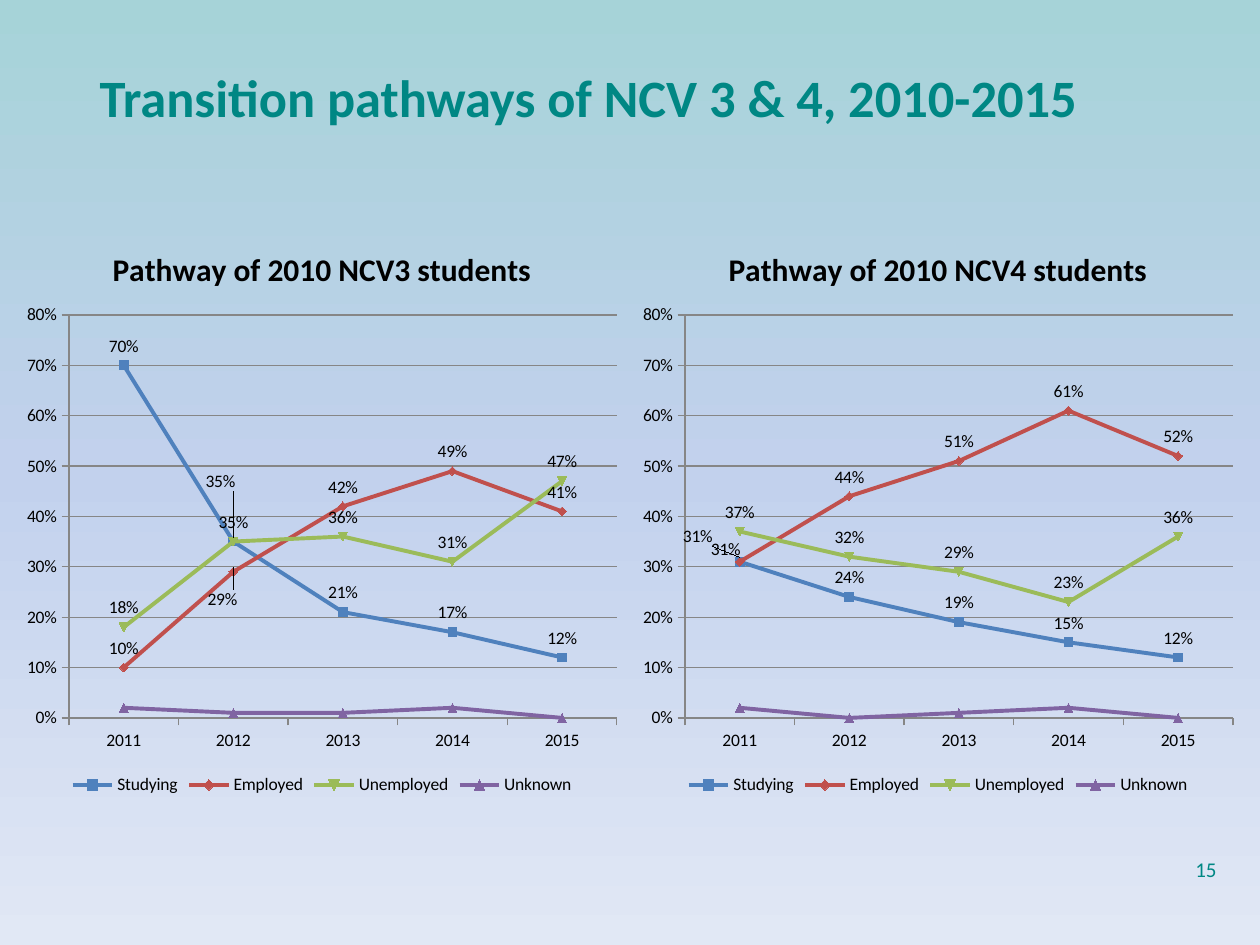
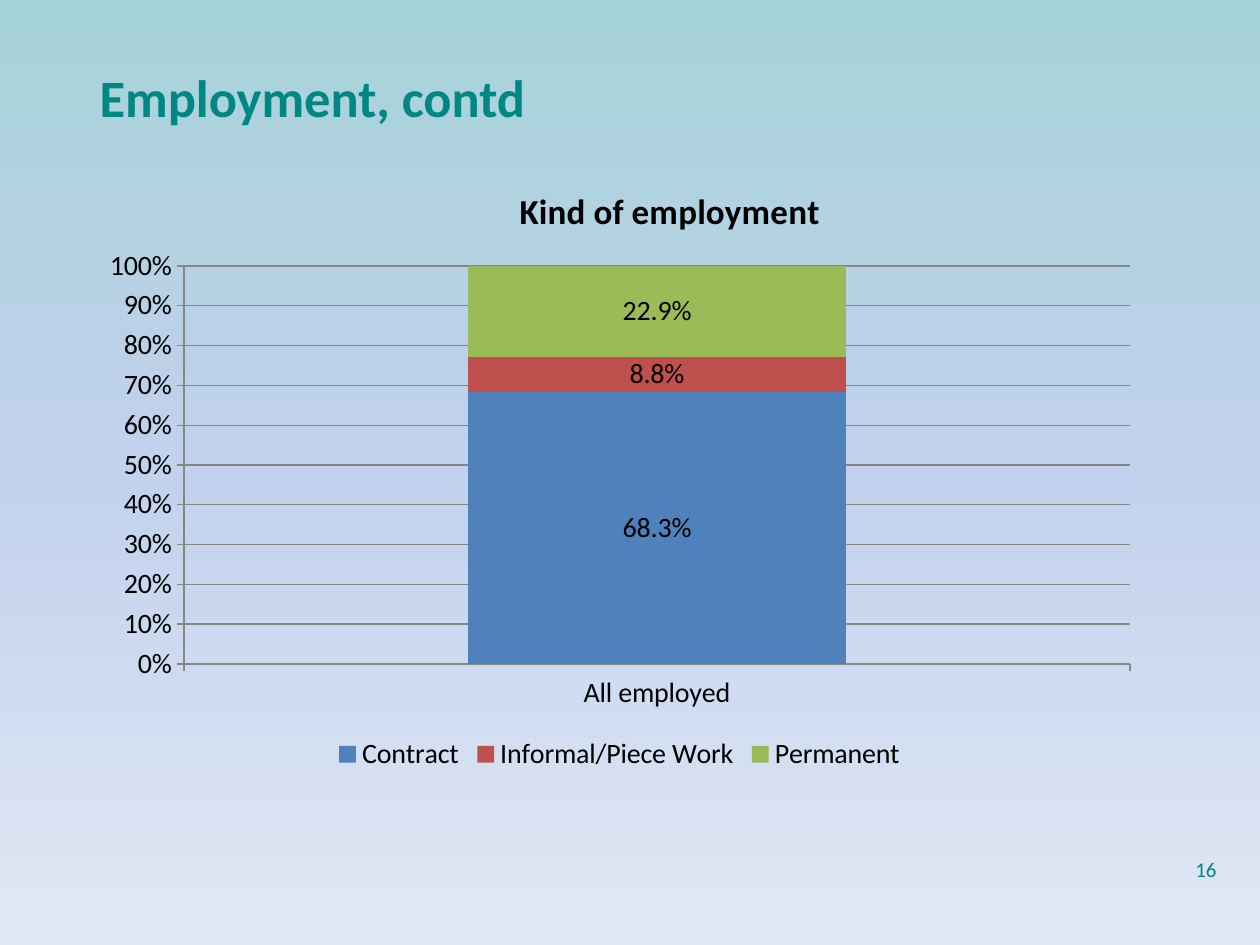
from dataclasses import dataclass

from lxml import etree
from pptx import Presentation
from pptx import util as u
from pptx.chart.data import CategoryChartData
from pptx.dml.color import RGBColor
from pptx.enum import chart as ch
from pptx.enum import text as tx
from pptx.oxml import ns

PX_PER_INCH = 126


@dataclass(frozen=True)
class Theme:
    font: str = "Calibri"
    accent: str = "008784"
    ink: str = "000000"
    rule: str = "868686"
    series: tuple = ("4F81BD", "C0504D", "9BBB59", "8064A2")
    backdrop: tuple = ((0, "A6D3D8"), (50, "C2D1ED"), (100, "E1E8F5"))
    title: int = 30
    number: int = 12
    pathway_title: int = 18
    pathway_text: int = 10
    employment_title: int = 20
    employment_text: int = 16


THEME = Theme()
YEARS = ("2011", "2012", "2013", "2014", "2015")
NCV3 = {
    "Studying": (0.70, 0.35, 0.21, 0.17, 0.12),
    "Employed": (0.10, 0.29, 0.42, 0.49, 0.41),
    "Unemployed": (0.18, 0.35, 0.36, 0.31, 0.47),
    "Unknown": (0.02, 0.01, 0.01, 0.02, 0),
}
NCV4 = {
    "Studying": (0.31, 0.24, 0.19, 0.15, 0.12),
    "Employed": (0.31, 0.44, 0.51, 0.61, 0.52),
    "Unemployed": (0.37, 0.32, 0.29, 0.23, 0.36),
    "Unknown": (0.02, 0, 0.01, 0.02, 0),
}
EMPLOYMENT = {"Contract": (0.683,), "Informal/Piece Work": (0.088,), "Permanent": (0.229,)}


def px(length):
    return u.Emu(round(length * 914400 / PX_PER_INCH))


def color(code):
    return RGBColor.from_string(code)


def style_font(font, size, code, bold=False):
    font.name = THEME.font
    font.size = u.Pt(size)
    font.bold = bold
    font.color.rgb = color(code)


def add_span(para, words, size, code, bold=False):
    span = para.add_run()
    span.text = words
    style_font(span.font, size, code, bold)


def paint_background(master):
    fill = master.background.fill
    fill.gradient()
    fill.gradient_angle = 270
    stops = master._element.find(".//" + ns.qn("a:gsLst"))
    for stop in list(stops):
        stops.remove(stop)
    for percent, code in THEME.backdrop:
        stop = etree.SubElement(stops, ns.qn("a:gs"), pos=str(percent * 1000))
        etree.SubElement(stop, ns.qn("a:srgbClr"), val=code)


def add_page(deck, title, number):
    page = deck.slides.add_slide(deck.slide_layouts[5])
    box = page.shapes.title
    box.left, box.top, box.width, box.height = map(px, (87, 58, 1134, 77))
    para = box.text_frame.paragraphs[0]
    para.alignment = tx.PP_ALIGN.LEFT
    add_span(para, title, THEME.title, THEME.accent, bold=True)

    box = page.shapes.add_textbox(*map(px, (935, 850, 294, 38)))
    box.text_frame.word_wrap = True
    box.text_frame.vertical_anchor = tx.MSO_ANCHOR.MIDDLE
    para = box.text_frame.paragraphs[0]
    para.alignment = tx.PP_ALIGN.RIGHT
    add_span(para, str(number), THEME.number, THEME.accent)
    return page


def add_layout(parent, position, **settings):
    old = parent.find(ns.qn("c:layout"))
    if old is not None:
        parent.remove(old)
    layout = etree.Element(ns.qn("c:layout"))
    manual = etree.SubElement(layout, ns.qn("c:manualLayout"))
    for name, value in settings.items():
        etree.SubElement(manual, ns.qn("c:" + name), val=str(value))
    parent.insert(position, layout)


def place_plot(chart, frame, plot):
    left, top, width, height = frame
    plot_left, plot_top, plot_width, plot_height = plot
    add_layout(
        chart._chartSpace.find(".//" + ns.qn("c:plotArea")), 0,
        layoutTarget="inner", xMode="edge", yMode="edge",
        x=round((plot_left - left) / width, 4), y=round((plot_top - top) / height, 4),
        w=round(plot_width / width, 4), h=round(plot_height / height, 4),
    )


def style_axes(chart, top):
    value_axis, category_axis = chart.value_axis, chart.category_axis
    value_axis.minimum_scale = 0
    value_axis.maximum_scale = top
    value_axis.major_unit = 0.1
    value_axis.has_major_gridlines = True
    value_axis.tick_labels.number_format = "0%"
    value_axis.tick_labels.number_format_is_linked = False
    for axis in (value_axis, category_axis):
        axis.major_tick_mark = ch.XL_TICK_MARK.OUTSIDE
    for part in (value_axis, category_axis, value_axis.major_gridlines):
        part.format.line.color.rgb = color(THEME.rule)
        part.format.line.width = u.Pt(0.75)


def add_chart(page, kind, frame, plot, title, title_size, size, categories, values, number_format, top):
    data = CategoryChartData(number_format=number_format)
    data.categories = categories
    for name, numbers in values.items():
        data.add_series(name, numbers)
    chart = page.shapes.add_chart(kind, *map(px, frame), data).chart
    style_font(chart.font, size, THEME.ink)
    chart.has_title = True
    add_span(chart.chart_title.text_frame.paragraphs[0], title, title_size, THEME.ink, bold=True)
    chart.chart_title.include_in_layout = False
    chart.has_legend = True
    chart.legend.position = ch.XL_LEGEND_POSITION.BOTTOM
    chart.legend.include_in_layout = False
    chart.plots[0].vary_by_categories = False
    style_axes(chart, top)
    place_plot(chart, frame, plot)
    return chart


def show_labels(series, size, number_format, position):
    labels = series.data_labels
    labels.show_value = True
    labels.number_format = number_format
    labels.number_format_is_linked = False
    labels.position = position
    style_font(labels.font, size, THEME.ink)
    for leader in series._element.findall(".//" + ns.qn("c:showLeaderLines")):
        leader.getparent().remove(leader)


def add_pathway_chart(page, left, title, values, moved_labels):
    frame = (left, 224, 614, 576)
    chart = add_chart(page, ch.XL_CHART_TYPE.LINE_MARKERS, frame, (left + 54, 315, 548, 403),
                      title, THEME.pathway_title, THEME.pathway_text, YEARS, values, "0%", 0.8)
    for series, code in zip(chart.plots[0].series, THEME.series):
        series.smooth = False
        series.format.line.color.rgb = color(code)
        series.format.line.width = u.Pt(2.25)
        for part in (series.marker.format.fill, series.marker.format.line.fill):
            part.solid()
            part.fore_color.rgb = color(code)
        if series.name != "Unknown":
            show_labels(series, THEME.pathway_text, "0%", ch.XL_LABEL_POSITION.ABOVE)
        if series.name in moved_labels:
            index, right, down = moved_labels[series.name]
            series.points[index].data_label.position = ch.XL_LABEL_POSITION.ABOVE
            label = series._element.find(".//" + ns.qn("c:dLbl"))
            add_layout(label, 1, x=round(right / frame[2], 4), y=round(down / frame[3], 4))


def add_employment_chart(page):
    chart = add_chart(page, ch.XL_CHART_TYPE.COLUMN_STACKED_100, (88, 155, 1063, 622),
                      (184, 266, 946, 398), "Kind of employment",
                      THEME.employment_title, THEME.employment_text,
                      ("All employed",), EMPLOYMENT, "0.0%", 1)
    add_layout(chart.chart_title._element, 1, xMode="edge", yMode="edge", x=0.4, y=0.04)
    chart.plots[0].gap_width = 150
    chart.plots[0].overlap = 100
    for series, code in zip(chart.plots[0].series, THEME.series):
        series.format.fill.solid()
        series.format.fill.fore_color.rgb = color(code)
        show_labels(series, THEME.employment_text, "0.0%", ch.XL_LABEL_POSITION.CENTER)


def main():
    deck = Presentation()
    deck.slide_width, deck.slide_height = px(1260), px(945)
    paint_background(deck.slide_master)

    page = add_page(deck, "Transition pathways of NCV 3 & 4, 2010-2015", 15)
    add_pathway_chart(page, 631, "Pathway of 2010 NCV4 students", NCV4,
                      {"Studying": (0, -14, 7), "Employed": (0, -42, -6)})
    add_pathway_chart(page, 15, "Pathway of 2010 NCV3 students", NCV3,
                      {"Employed": (1, -11, 47), "Unemployed": (1, -13, -41)})

    page = add_page(deck, "Employment, contd", 16)
    add_employment_chart(page)

    deck.save("out.pptx")


if __name__ == "__main__":
    main()
